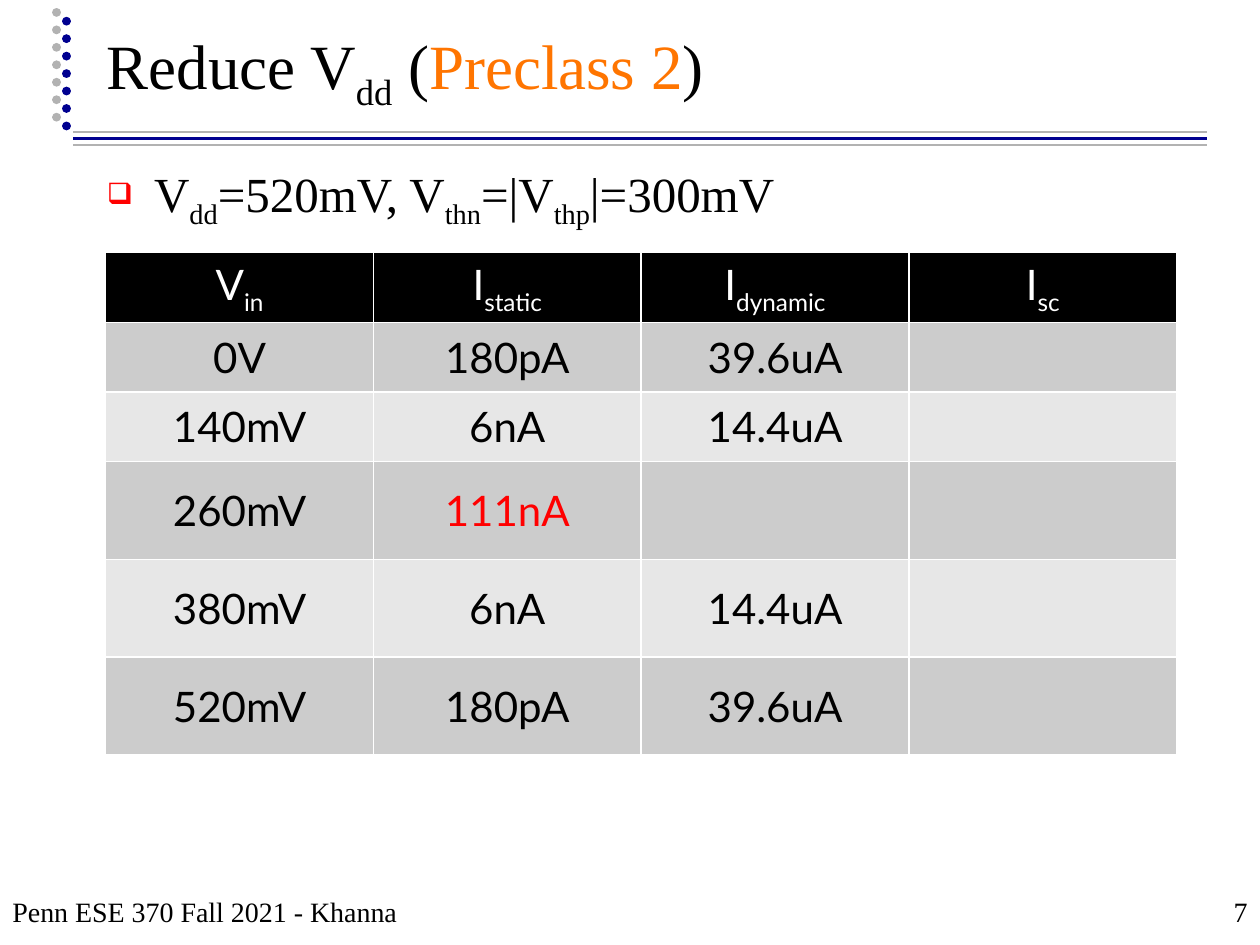
from lxml import etree
from pptx import Presentation
from pptx.dml.color import RGBColor
from pptx.enum.dml import MSO_LINE
from pptx.enum.shapes import MSO_CONNECTOR
from pptx.enum.text import MSO_ANCHOR, PP_ALIGN
from pptx.oxml.ns import qn
from pptx.util import Pt

STRAIGHT = MSO_CONNECTOR.STRAIGHT
DOTTED = MSO_LINE.ROUND_DOT
TOP, MIDDLE, BOTTOM = MSO_ANCHOR.TOP, MSO_ANCHOR.MIDDLE, MSO_ANCHOR.BOTTOM
LEFT, CENTER, RIGHT = PP_ALIGN.LEFT, PP_ALIGN.CENTER, PP_ALIGN.RIGHT

THEME = {
    "serif": "Times New Roman", "sans": "Lato",
    "title": 36, "body": 28, "cell": 24, "footer": 16,
    "black": "000000", "white": "FFFFFF", "red": "FF0000", "orange": "FF7500",
    "navy": "000090", "gray": "B2B2B2",
    "bands": ("CCCCCC", "E7E7E7"),
}

# Content: a run is (text, style), where style is "", "sub" or a theme colour
TITLE = [("Reduce V", ""), ("dd", "sub"), (" (", ""), ("Preclass 2", "orange"), (")", "")]
CONDITIONS = [("V", ""), ("dd", "sub"), ("=520mV, V", ""), ("thn", "sub"),
              ("=|V", ""), ("thp", "sub"), ("|=300mV", "")]
FOOTER = [("Penn ESE 370 Fall 2021 - Khanna", "")]
PAGE_NUMBER = [("7", "")]
HEADERS = [("V", "in"), ("I", "static"), ("I", "dynamic"), ("I", "sc")]
CURRENTS = [
    ("0V", "180pA", "39.6uA", ""),
    ("140mV", "6nA", "14.4uA", ""),
    ("260mV", "111nA", "", ""),
    ("380mV", "6nA", "14.4uA", ""),
    ("520mV", "180pA", "39.6uA", ""),
]
HIGHLIGHTED = "111nA"
ROW_HEIGHTS = (39.6, 39.6, 39.6, 56, 56, 56)
COLUMN_WIDTH = 153

# Rules and dotted lines: start x, start y, end x, end y, colour, width, dotted
LINES = [
    (42, 79.2, 690, 79.2, "navy", 2, False),
    (42, 82.8, 690, 82.8, "gray", 1, False),
    (42, 75.6, 690, 75.6, "gray", 1, False),
    (32.4, 67, 32.4, 0.9, "gray", 5, True),
    (38, 72, 38, 5.8, "navy", 5, True),
]


def color(name):
    return RGBColor.from_string(THEME[name])


def add_line(slide, x1, y1, x2, y2, color_name, width, dotted):
    connector = slide.shapes.add_connector(STRAIGHT, Pt(x1), Pt(y1), Pt(x2), Pt(y2))
    connector.line.color.rgb = color(color_name)
    connector.line.width = Pt(width)
    if dotted:
        connector.line.dash_style = DOTTED
        connector.line._get_or_add_ln().set("cap", "rnd")
    etree.SubElement(connector._element.spPr, qn("a:effectLst"))


def write_runs(paragraph, runs, font_name, size, color_name, alignment):
    paragraph.alignment = alignment
    paragraph.font.name = THEME[font_name]
    paragraph.font.size = Pt(THEME[size])
    paragraph.font.color.rgb = color(color_name)
    for text, style in runs:
        run = paragraph.add_run()
        run.text = text
        if style == "sub":
            run._r.get_or_add_rPr().set("baseline", "-25000")
        elif style:
            run.font.color.rgb = color(style)


def add_bullet(paragraph):
    properties = paragraph._p.get_or_add_pPr()
    properties.set("marL", str(Pt(27)))
    properties.set("indent", str(Pt(-27)))
    bullet_color = etree.SubElement(properties, qn("a:buClr"))
    etree.SubElement(bullet_color, qn("a:srgbClr"), val=THEME["red"])
    etree.SubElement(properties, qn("a:buSzPct"), val="60000")
    etree.SubElement(properties, qn("a:buChar"), char="❑")


def add_text(slide, box, runs, size, anchor=BOTTOM, alignment=LEFT, bullet=False):
    frame = slide.shapes.add_textbox(*map(Pt, box)).text_frame
    frame.word_wrap = True
    frame.vertical_anchor = anchor
    paragraph = frame.paragraphs[0]
    if bullet:
        add_bullet(paragraph)
    write_runs(paragraph, runs, "serif", size, "black", alignment)


def style_cell(cell, fill):
    cell.vertical_anchor = MIDDLE
    properties = cell._tc.get_or_add_tcPr()
    for side in ("lnL", "lnR", "lnT", "lnB"):
        border = etree.SubElement(properties, qn(f"a:{side}"), w=str(Pt(1)))
        solid = etree.SubElement(border, qn("a:solidFill"))
        etree.SubElement(solid, qn("a:srgbClr"), val=THEME["white"])
    cell.fill.solid()
    cell.fill.fore_color.rgb = RGBColor.from_string(fill)


def add_current_table(slide):
    rows = [[[(symbol, ""), (index, "sub")] for symbol, index in HEADERS]]
    for values in CURRENTS:
        rows.append([[(value, "red" if value == HIGHLIGHTED else "")] if value else []
                     for value in values])
    frame = slide.shapes.add_table(len(rows), len(HEADERS), Pt(60.4), Pt(144.4),
                                   Pt(COLUMN_WIDTH * len(HEADERS)), Pt(sum(ROW_HEIGHTS)))
    table = frame.table
    for column in table.columns:
        column.width = Pt(COLUMN_WIDTH)
    for row_index, row in enumerate(rows):
        table.rows[row_index].height = Pt(ROW_HEIGHTS[row_index])
        header = row_index == 0
        fill = THEME["black"] if header else THEME["bands"][(row_index - 1) % 2]
        for column_index, runs in enumerate(row):
            cell = table.cell(row_index, column_index)
            style_cell(cell, fill)
            write_runs(cell.text_frame.paragraphs[0], runs, "sans", "cell",
                       "white" if header else "black", CENTER)


def main():
    presentation = Presentation()
    presentation.slide_width, presentation.slide_height = Pt(720), Pt(540)
    slide = presentation.slides.add_slide(presentation.slide_layouts[6])

    # Decoration
    for line in LINES:
        add_line(slide, *line)

    # Title and bullet
    add_text(slide, (54, 8, 613.5, 60), TITLE, "title")
    add_text(slide, (54, 90, 612, 396), CONDITIONS, "body", anchor=TOP, bullet=True)

    # Footer
    add_text(slide, (0, 498, 390, 36), FOOTER, "footer")
    add_text(slide, (570, 498, 150, 36), PAGE_NUMBER, "footer", alignment=RIGHT)

    # Currents for each input voltage
    add_current_table(slide)

    presentation.save("out.pptx")


if __name__ == "__main__":
    main()
